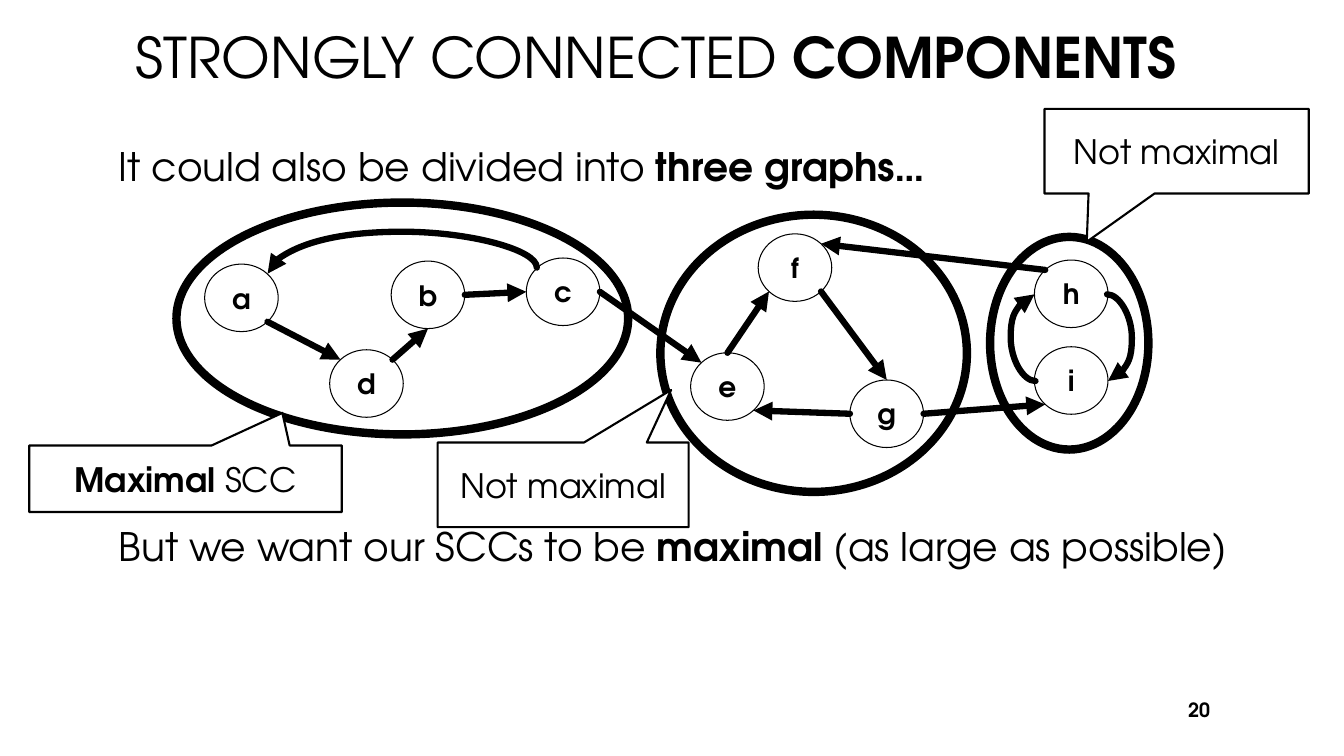
"""Build the slide on strongly connected components."""
from dataclasses import dataclass
from math import cos, radians, sin

from lxml import etree
from pptx import Presentation
from pptx import util as u
from pptx.dml.color import RGBColor
from pptx.enum import shapes, text
from pptx.oxml.ns import qn

PX = 9144
FACE = "TeX Gyre Adventor"
INK, PAPER = "000000", "FFFFFF"
SHAPE, LINK, ALIGN = shapes.MSO_SHAPE, shapes.MSO_CONNECTOR, text.PP_ALIGN
WIDE, HIGH = 73, 67
ANGLES = {"E": 0, "SE": 45, "S": 90, "SW": 135, "W": 180, "NW": 225, "N": 270, "NE": 315}

Runs = tuple[tuple[str, bool], ...]
Box = tuple[int, int, int, int]


@dataclass(frozen=True)
class Node:
    """A graph vertex, placed by its top left corner."""
    name: str
    x: int
    y: int

    def site(self, side: str) -> tuple[float, float]:
        """Give the point on the outline at a compass side."""
        turn = radians(ANGLES[side])
        return (self.x + WIDE / 2 * (1 + cos(turn)), self.y + HIGH / 2 * (1 + sin(turn)))


@dataclass(frozen=True)
class Edge:
    """A straight arrow between two sites of nodes."""
    tail: str
    leave: str
    head: str
    reach: str


@dataclass(frozen=True)
class Curve:
    """A curved arrow, given by its frame, turn, flips and bulge."""
    box: Box
    turn: int
    flip: bool
    bulge: float


@dataclass(frozen=True)
class Callout:
    """A speech box with the offset of its tip."""
    box: Box
    tip: tuple[float, float]
    runs: Runs


@dataclass(frozen=True)
class Label:
    """A plain line of text."""
    box: Box
    size: int
    align: ALIGN
    runs: Runs


NODES = {name: Node(name, x, y) for name, x, y in (
    ("a", 203, 262), ("b", 388, 259), ("c", 522, 256), ("d", 327, 347), ("e", 685, 350),
    ("f", 752, 232), ("g", 843, 377), ("h", 1026, 258), ("i", 1026, 344))}
EDGES = [Edge(*row.split()) for row in (
    "b E c W", "d NE b S", "a SE d NW", "f SE g N", "g W e SE",
    "e N f SW", "c E e NW", "g E i SW", "h NW f NE")]
CURVES = [
    Curve((396, 135, 6, 267), 270, True, -5.95),
    Curve((1098, 292, 1, 86), 0, False, 25),
    Curve((1026, 292, 1, 86), 180, False, 25),
]
RINGS: list[Box] = [(175, 201, 448, 230), (655, 213, 304, 275), (982, 235, 157, 211)]
CALLOUTS = [
    Callout((29, 442, 310, 66), (0.31, -0.99), (("Maximal", True), (" SCC", False))),
    Callout((434, 439, 249, 84), (0.43, -1.12), (("Not maximal", False),)),
    Callout((1036, 108, 262, 84), (-0.34, 1.07), (("Not maximal", False),)),
]
LABELS = [
    Label((125, 0, 1083, 112), 40, ALIGN.LEFT,
          (("STRONGLY CONNECTED ", False), ("COMPONENTS", True))),
    Label((108, 135, 1140, 60), 28, ALIGN.LEFT,
          (("It could also be divided into ", False), ("three graphs…", True))),
    Label((108, 512, 1140, 60), 28, ALIGN.LEFT,
          (("But we want our SCCs to be ", False), ("maximal ", True),
           ("(as large as possible)", False))),
    Label((1150, 684, 60, 40), 14, ALIGN.RIGHT, (("20", True),)),
]


def px(*dims: float) -> list[int]:
    """Turn px into EMU."""
    return [round(d * PX) for d in dims]


def tint(font_or_fill, shade: str) -> None:
    """Set a colour from a hex string."""
    font_or_fill.rgb = RGBColor.from_string(shade)


def write(shape, runs: Runs, size: int, align: ALIGN) -> None:
    """Fill a shape with one paragraph."""
    frame = shape.text_frame
    frame.word_wrap = True
    frame.vertical_anchor = text.MSO_ANCHOR.MIDDLE
    para = frame.paragraphs[0]
    para.alignment = align
    font = para.font
    font.name, font.size = FACE, u.Pt(size)
    tint(font.color, INK)
    bolds = {bold for _, bold in runs}
    if len(bolds) == 1:
        font.bold = bolds.pop()
    for words, bold in runs:
        run = para.add_run()
        run.text = words
        if len(runs) > 1:
            run.font.bold = bold


def block(slide, kind: SHAPE, box: Box, width: float, fill: str | None = PAPER):
    """Add an outlined shape."""
    shape = slide.shapes.add_shape(kind, *px(*box))
    shape.shadow.inherit = False
    if fill:
        shape.fill.solid()
        tint(shape.fill.fore_color, fill)
    else:
        shape.fill.background()
    tint(shape.line.color, INK)
    shape.line.width = u.Pt(width)
    return shape


def arrow(slide, kind: LINK, ends: tuple[float, ...]):
    """Add a thick line with an arrowhead at its end."""
    link = slide.shapes.add_connector(kind, *px(*ends))
    tint(link.line.color, INK)
    link.line.width = u.Pt(4.5)
    props = link._element.spPr
    ln = props.find(qn("a:ln"))
    ln.set("cap", "rnd")
    etree.SubElement(ln, qn("a:tailEnd"), type="triangle")
    etree.SubElement(props, qn("a:effectLst"))
    return link


def bend(slide, curve: Curve) -> None:
    """Add a curved arrow."""
    x, y, w, h = curve.box
    props = arrow(slide, LINK.CURVE, (x, y, x + w, y + h))._element.spPr
    frame = props.find(qn("a:xfrm"))
    frame.set("rot", str(curve.turn * 60000))
    if curve.flip:
        frame.set("flipH", "1")
        frame.set("flipV", "1")
    guides = props.find(qn("a:prstGeom")).find(qn("a:avLst"))
    etree.SubElement(guides, qn("a:gd"), name="adj1", fmla=f"val {round(curve.bulge * 100000)}")


def main() -> None:
    """Draw the slide and save it."""
    deck = Presentation()
    deck.slide_width, deck.slide_height = px(1333, 750)
    slide = deck.slides.add_slide(deck.slide_layouts[6])
    for label in LABELS:
        write(slide.shapes.add_textbox(*px(*label.box)), label.runs, label.size, label.align)
    for node in NODES.values():
        disc = block(slide, SHAPE.OVAL, (node.x, node.y, WIDE, HIGH), 0.75)
        write(disc, ((node.name, True),), 20, ALIGN.CENTER)
    for edge in EDGES:
        start, end = NODES[edge.tail].site(edge.leave), NODES[edge.head].site(edge.reach)
        arrow(slide, LINK.STRAIGHT, start + end)
    for curve in CURVES:
        bend(slide, curve)
    for ring in RINGS:
        block(slide, SHAPE.OVAL, ring, 6, None)
    for call in CALLOUTS:
        shape = block(slide, SHAPE.RECTANGULAR_CALLOUT, call.box, 1.5)
        shape.adjustments[0], shape.adjustments[1] = call.tip
        write(shape, call.runs, 24, ALIGN.CENTER)
    deck.save("out.pptx")


if __name__ == "__main__":
    main()
